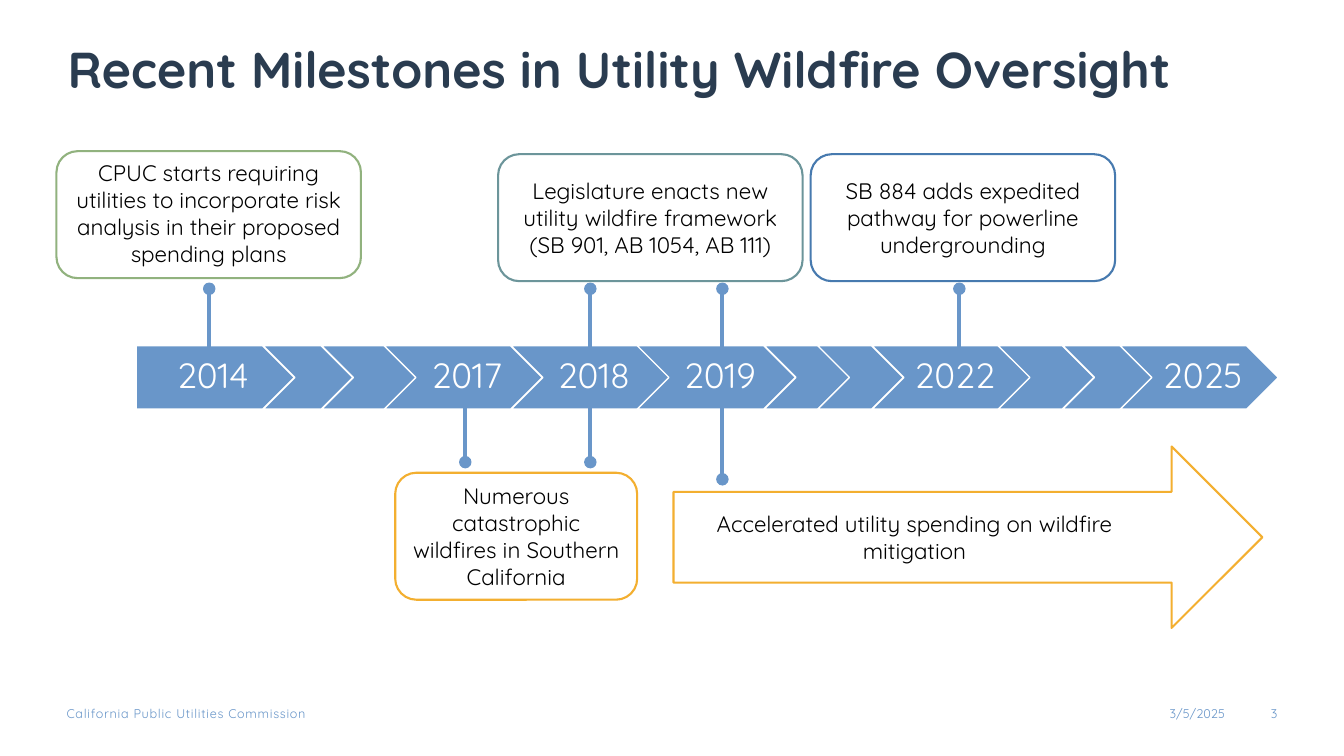
from dataclasses import dataclass

from lxml import etree
from pptx import Presentation
from pptx.dml.color import RGBColor
from pptx.enum.shapes import MSO_CONNECTOR, MSO_SHAPE
from pptx.enum.text import MSO_ANCHOR, MSO_AUTO_SIZE, PP_ALIGN
from pptx.oxml.ns import qn
from pptx.util import Pt

LEFT, CENTER, RIGHT = PP_ALIGN.LEFT, PP_ALIGN.CENTER, PP_ALIGN.RIGHT
TOP, MIDDLE, BOTTOM = MSO_ANCHOR.TOP, MSO_ANCHOR.MIDDLE, MSO_ANCHOR.BOTTOM
PLATE, CHEVRON = MSO_SHAPE.PENTAGON, MSO_SHAPE.CHEVRON
ROUNDED, ARROW, DOT = MSO_SHAPE.ROUNDED_RECTANGLE, MSO_SHAPE.RIGHT_ARROW, MSO_SHAPE.OVAL
STRAIGHT = MSO_CONNECTOR.STRAIGHT
EMU_PER_PX = 9144  # 100 px to the inch


@dataclass(frozen=True)
class Theme:
    font: str = "Quicksand"
    navy: str = "2A3C50"
    blue: str = "6996C9"
    white: str = "FFFFFF"
    black: str = "000000"
    green: str = "91B27E"
    teal: str = "6C959A"
    royal: str = "477AAF"
    amber: str = "F3AF30"
    title_size: int = 36
    year_size: int = 25
    body_size: int = 16
    footer_size: int = 9


THEME = Theme()

# Content
TITLE = "Recent Milestones in Utility Wildfire Oversight"
YEARS = [  # left, width, label
    (135, 157, "2014"), (261, 89, ""), (319, 94, ""), (381, 157, "2017"),
    (507, 157, "2018"), (632, 157, "2019"), (758, 85, ""), (811, 85, ""),
    (865, 157, "2022"), (990, 95, ""), (1054, 89, ""), (1111, 157, "2025"),
]
BAR_TOP, BAR_HEIGHT = 343, 63
PINS = [  # x, start on the bar, top of the dot
    (207, 350, 281), (461, 400, 453), (585, 400, 453), (585, 350, 281),
    (716, 350, 281), (716, 400, 470), (951, 350, 281),
]
DOT_SIZE = 11
CALLOUTS = [  # shape, position, outline, anchor, insets, text
    (ROUNDED, (56, 150, 302, 126), THEME.green, BOTTOM, (10, 5, 10, 5),
     "CPUC starts requiring utilities to incorporate risk analysis in their proposed spending plans"),
    (ROUNDED, (392, 469, 240, 126), THEME.amber, MIDDLE, (10, 5, 10, 5),
     "Numerous catastrophic wildfires in Southern California"),
    (ROUNDED, (494, 153, 302, 126), THEME.teal, MIDDLE, (10, 5, 10, 5),
     "Legislature enacts new utility wildfire framework (SB 901, AB 1054, AB 111)"),
    (ROUNDED, (804, 153, 302, 126), THEME.royal, MIDDLE, (10, 5, 10, 5),
     "SB 884 adds expedited pathway for powerline undergrounding"),
    (ARROW, (668, 443, 584, 180), THEME.amber, MIDDLE, (23, 5, 84, 5),
     "Accelerated utility spending on wildfire mitigation"),
]
FOOTERS = [  # position, alignment, letter spacing in 1/100 pt, text
    ((66, 700, 321, 15), LEFT, 50, "California Public Utilities Commission"),
    ((1069, 700, 146, 22), RIGHT, 0, "3/5/2025"),
    ((1225, 700, 42, 20), RIGHT, 0, "3"),
]


def px(*lengths):
    return [length * EMU_PER_PX for length in lengths]


def write(box, text, size, color, align=CENTER, anchor=MIDDLE,
          insets=(0, 0, 0, 0), wrap=True, bold=False, spacing=0):
    frame = box.text_frame
    left, top, right, bottom = px(*insets)
    layout = {"auto_size": MSO_AUTO_SIZE.NONE, "word_wrap": wrap, "vertical_anchor": anchor,
              "margin_left": left, "margin_top": top,
              "margin_right": right, "margin_bottom": bottom}
    for name, value in layout.items():
        setattr(frame, name, value)
    para = frame.paragraphs[0]
    para.alignment = align
    span = para.add_run()
    span.text = text
    for name, value in {"name": THEME.font, "size": Pt(size), "bold": bold}.items():
        setattr(span.font, name, value)
    span.font.color.rgb = RGBColor.from_string(color)
    if spacing:
        span.font._element.set("spc", str(spacing))
    return para


def add_shape(page, kind, position, line, width, fill=None):
    shape = page.shapes.add_shape(kind, *px(*position))
    shape.shadow.inherit = False
    if fill:
        shape.fill.solid()
        shape.fill.fore_color.rgb = RGBColor.from_string(fill)
    else:
        shape.fill.background()
    shape.line.color.rgb = RGBColor.from_string(line)
    shape.line.width = Pt(width)
    return shape


def add_pin(page, x, start, dot_top):
    center = dot_top + DOT_SIZE // 2
    stem = page.shapes.add_connector(STRAIGHT, *px(x, start, x, center))
    stem.line.color.rgb = RGBColor.from_string(THEME.blue)
    stem.line.width = Pt(3)
    etree.SubElement(stem._element.spPr, qn("a:effectLst"))
    position = (x - DOT_SIZE // 2, dot_top, DOT_SIZE, DOT_SIZE)
    add_shape(page, DOT, position, THEME.blue, 1, THEME.blue)


def main():
    deck = Presentation()
    deck.slide_width, deck.slide_height = px(1333, 750)
    page = deck.slides.add_slide(deck.slide_layouts[5])

    # Title
    title = page.shapes.title
    title.left, title.top, title.width, title.height = px(67, -42, 1200, 145)
    write(title, TITLE, THEME.title_size, THEME.navy, LEFT, BOTTOM, (0, 5, 10, 5), bold=True)

    # Footer
    for position, align, spacing, text in FOOTERS:
        box = page.shapes.add_textbox(*px(*position))
        write(box, text, THEME.footer_size, THEME.blue, align, TOP, spacing=spacing)

    # Year bar
    for index, (left, width, label) in enumerate(YEARS):
        kind = CHEVRON if index else PLATE
        step = add_shape(page, kind, (left, BAR_TOP, width, BAR_HEIGHT),
                         THEME.white, 1, THEME.blue)
        if label:
            insets = (11 if index else 15, 7, 4, 7)
            para = write(step, label, THEME.year_size, THEME.white, insets=insets, wrap=False)
            para.line_spacing = 0.9

    # Pins
    for pin in PINS:
        add_pin(page, *pin)

    # Callouts
    for kind, position, outline, anchor, insets, text in CALLOUTS:
        callout = add_shape(page, kind, position, outline, 1.5)
        write(callout, text, THEME.body_size, THEME.black, anchor=anchor, insets=insets)

    deck.save("out.pptx")


if __name__ == "__main__":
    main()
